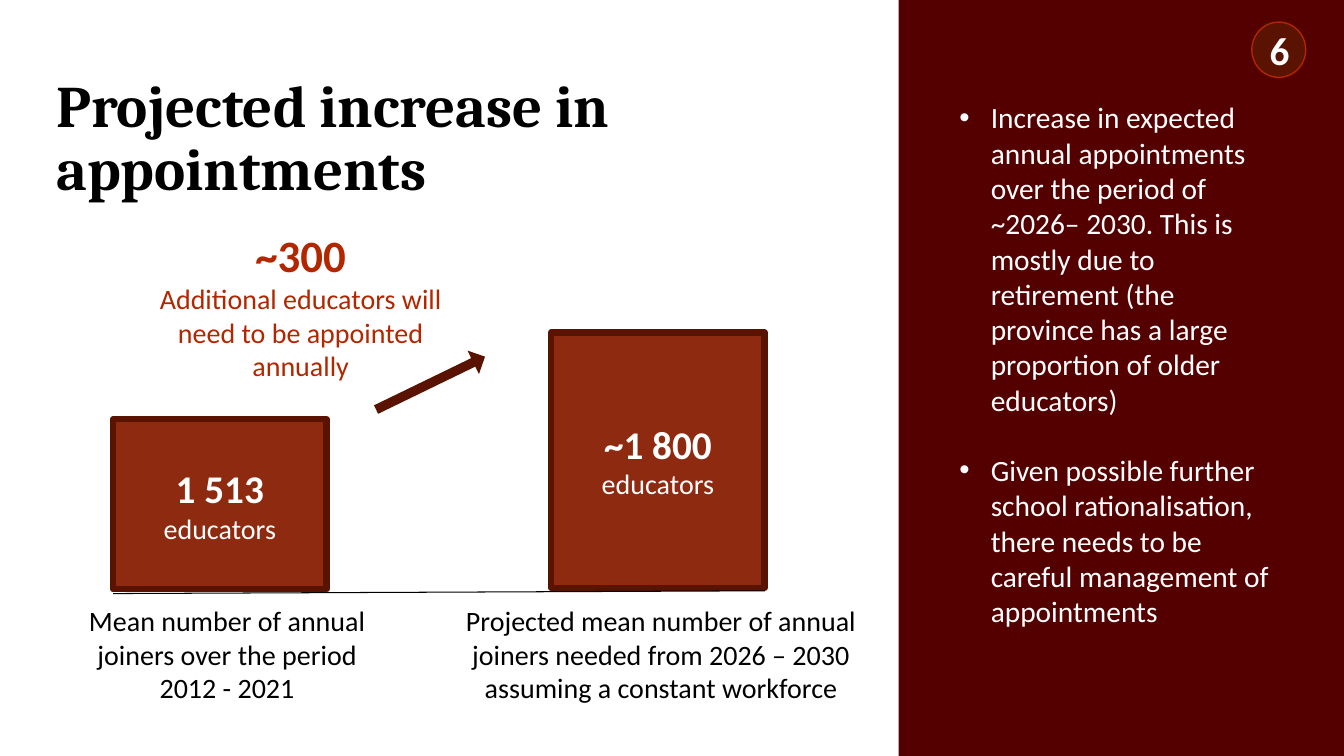
"""Build the slide on the projected increase in educator appointments."""
from lxml.etree import SubElement as Sub
from pptx import Presentation
from pptx.dml.color import RGBColor as Rgb
from pptx.enum.shapes import MSO_CONNECTOR as Link, MSO_SHAPE as Kind
from pptx.enum.text import MSO_ANCHOR as Anchor, MSO_AUTO_SIZE as Fit, PP_ALIGN as Align
from pptx.oxml.ns import qn
from pptx.util import Pt

INK = {"wine": "550000", "brick": "861D00", "edge": "591300",
       "rust": "B22600", "white": "FFFFFF", "black": "000000"}

TITLE = ("Projected increase in appointments", (33, 62.5, 573, 75))
POINTS = [
    "Increase in expected annual appointments over the period of ~2026– 2030. "
    "This is mostly due to retirement (the province has a large proportion of older educators)",
    "Given possible further school rationalisation, there needs to be careful "
    "management of appointments",
]
LIST = (678, 67.5, 239, 395)
PANEL = (642, 0, 318, 540)
BADGE = ("6", (894.2, 15.8, 38.5, 39.5))
NOTES = [
    ((94.3, 160, 241, 116), "rust", Anchor.MIDDLE,
     [("~300", 32, True), ("Additional educators will", 20, False),
      ("need to be appointed", 20, False), ("annually", 20, False)]),
    ((43, 427.7, 238.5, 76), "black", Anchor.TOP,
     [("Mean number of annual joiners over the period 2012 - 2021", 20, False)]),
    ((319.7, 427.7, 305, 76), "black", Anchor.TOP,
     [("Projected mean number of annual joiners needed from 2026 – 2030 "
       "assuming a constant workforce", 20, False)]),
]
BARS = [("1 513", (80.8, 299.5, 152.5, 121.5)), ("~1 800", (393.7, 237.5, 152.5, 182.5))]
ARROW = ((264.3, 264.3, 86.5, 18.7), 334.1, 0.36)
BASE = (80.8, 424, 546.3, 422)


def color(name):
    return Rgb.from_string(INK[name])


def pts(nums):
    return [Pt(n) for n in nums]


def style(para, size, tint, bold=False, face="Calibri"):
    font = para.font
    font.size, font.bold, font.name = Pt(size), bold, face
    font.color.rgb = color(tint)


def write(frame, lines, tint, anchor=Anchor.MIDDLE):
    frame.word_wrap = True
    frame.vertical_anchor = anchor
    for i, (text, size, bold) in enumerate(lines):
        para = frame.add_paragraph() if i else frame.paragraphs[0]
        para.text, para.alignment = text, Align.CENTER
        style(para, size, tint, bold)


def draw(kind, box, fill, edge=None, width=0):
    shape = slide.shapes.add_shape(kind, *pts(box))
    shape.shadow.inherit = False
    shape.fill.solid()
    shape.fill.fore_color.rgb = color(fill)
    if edge:
        shape.line.color.rgb = color(edge)
        shape.line.width = Pt(width)
    else:
        shape.line.fill.background()
    return shape


def place(holder, box, anchor):
    holder.left, holder.top, holder.width, holder.height = pts(box)
    frame = holder.text_frame
    frame.word_wrap, frame.auto_size = True, Fit.NONE
    frame.vertical_anchor = anchor
    return frame


deck = Presentation()
deck.slide_width, deck.slide_height = Pt(960), Pt(540)
slide = deck.slides.add_slide(deck.slide_layouts[1])

panel = draw(Kind.RECTANGLE, PANEL, "wine")
tree = panel.element.getparent()
tree.remove(panel.element)
tree.insert(2, panel.element)

head, box = TITLE
para = place(slide.shapes.title, box, Anchor.MIDDLE).paragraphs[0]
para.text, para.alignment, para.line_spacing = head, Align.LEFT, 0.9
style(para, 42, "black", True, "Cambria")

frame = place(slide.placeholders[1], LIST, Anchor.TOP)
for i, text in enumerate(POINTS):
    para = frame.add_paragraph() if i else frame.paragraphs[0]
    para.text, para.space_before = text, Pt(25 if i else 0)
    style(para, 21, "white")
    props = para._p.get_or_add_pPr()
    props.set("marL", str(Pt(22.5)))
    props.set("indent", str(-Pt(22.5)))

for box, tint, anchor, lines in NOTES:
    write(slide.shapes.add_textbox(*pts(box)).text_frame, lines, tint, anchor)

for count, box in BARS:
    bar = draw(Kind.RECTANGLE, box, "brick", "edge", 4.5)
    tone = bar.element.spPr.find(qn("a:solidFill"))[0]
    Sub(tone, qn("a:alpha"), val="94000")
    write(bar.text_frame, [(count, 28, True), ("educators", 20, False)], "white")

box, turn, shaft = ARROW
arrow = draw(Kind.RIGHT_ARROW, box, "edge")
arrow.rotation = turn
arrow.adjustments[0] = shaft

base = slide.shapes.add_connector(Link.STRAIGHT, *pts(BASE))
base.line.color.rgb = color("black")
base.line.width = Pt(0.75)
Sub(base.element.spPr, qn("a:effectLst"))

page, box = BADGE
badge = draw(Kind.OVAL, box, "edge", "rust", 1)
write(badge.text_frame, [(page, 28, True)], "white")

deck.save("out.pptx")
